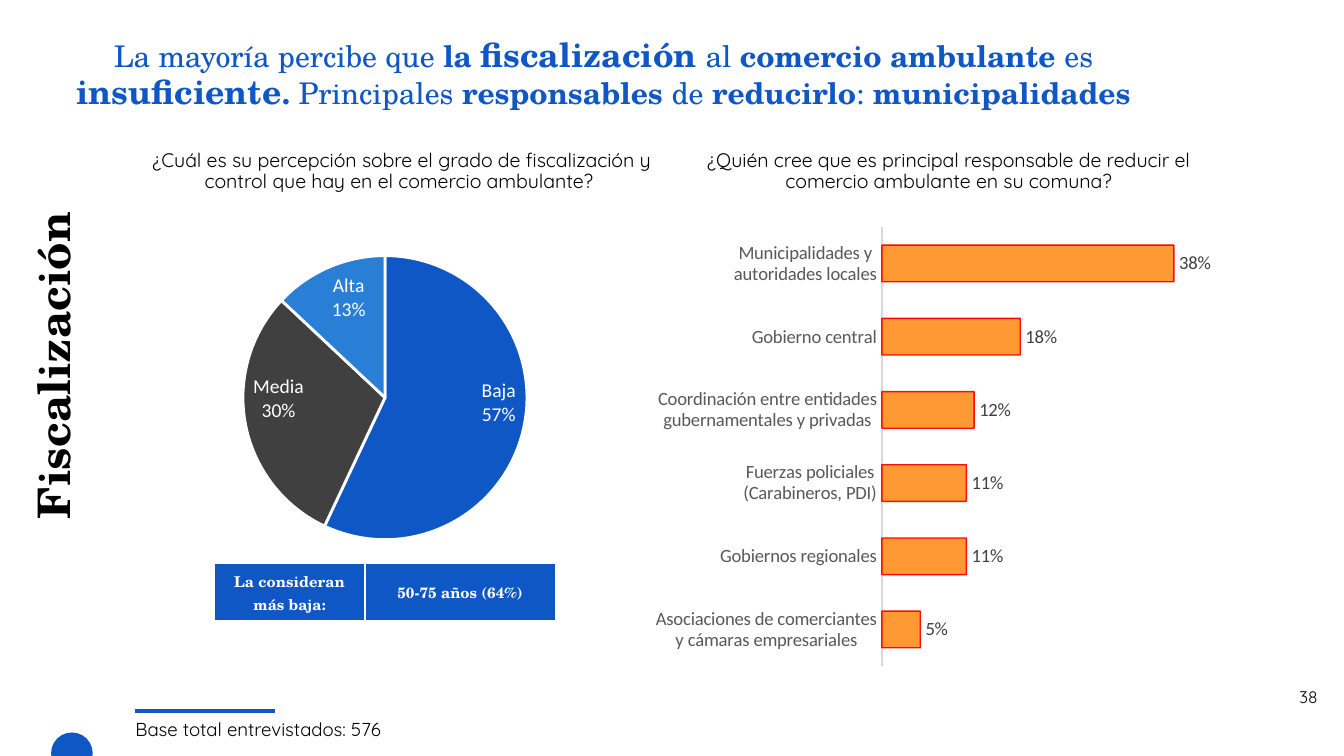
from lxml import etree
from pptx import Presentation, oxml
from pptx import util as u
from pptx.chart.data import CategoryChartData
from pptx.dml.color import RGBColor
from pptx.enum import chart as ch
from pptx.enum import shapes, text
from pptx.oxml.ns import qn

WIDTH = 10
HEIGHT = WIDTH * 9 / 16
UNIT = 0.1  # side of one grid cell, in inches
COLORS = {"blue": "0E57C4", "sky": "297FD5", "dark": "404040", "grey": "595959",
          "axis": "D9D9D9", "orange": "FF9933", "red": "FF0000",
          "white": "FFFFFF", "black": "000000"}
SERIF, SANS, CHART_FONT = "TeX Gyre Schola", "Quicksand", "Calibri"


def rgb(name):
    return RGBColor.from_string(COLORS[name])


def grid(*cells):
    """Turn columns and rows of the grid into lengths."""
    return [u.Inches(cell * UNIT) for cell in cells]


def style(font, size, color, name, bold=False):
    font.size, font.name, font.bold = u.Pt(size), name, bold
    font.color.rgb = rgb(color)


def write(frame, spans, size=10, color="black", font=SANS, bold=False,
          align=text.PP_ALIGN.LEFT, anchor=text.MSO_ANCHOR.TOP, spacing=0.9):
    """Fill a frame with one paragraph; spans is a string or (text, bold, size) tuples."""
    frame.word_wrap = True
    frame.vertical_anchor = anchor
    para = frame.paragraphs[0]
    para.alignment, para.line_spacing = align, spacing
    if isinstance(spans, str):
        spans = [(spans, bold, size)]
    for words, heavy, points in spans:
        span = para.add_run()
        span.text = words
        style(span.font, points, color, font, heavy)


def add_text(page, box, spans, **look):
    write(page.shapes.add_textbox(*grid(*box)).text_frame, spans, **look)


def add_decoration(page, dot_box, rule):
    dot = page.shapes.add_shape(shapes.MSO_SHAPE.OVAL, *grid(*dot_box))
    dot.shadow.inherit = False
    dot.fill.solid()
    dot.fill.fore_color.rgb = rgb("blue")
    dot.line.fill.background()
    line = page.shapes.add_connector(shapes.MSO_CONNECTOR.STRAIGHT, *grid(*rule))
    line.line.color.rgb, line.line.width = rgb("blue"), u.Pt(1.75)
    etree.SubElement(line._element.spPr, qn("a:effectLst"))


def add_side_title(page, box, words):
    title = page.shapes.title
    title.left, title.top, title.width, title.height = grid(*box)
    title.rotation = 270
    write(title.text_frame, words, size=24, font=SERIF, bold=True,
          align=text.PP_ALIGN.CENTER, anchor=text.MSO_ANCHOR.MIDDLE)


def add_chart(page, kind, box, answers, number_format, plot_area):
    """Add a one-series chart; plot_area is in percent of the chart's box."""
    data = CategoryChartData(number_format=number_format)
    data.categories = answers.keys()
    data.add_series("Series 1", answers.values())
    chart = page.shapes.add_chart(kind, *grid(*box), data).chart
    chart.has_title = chart.has_legend = False
    style(chart.font, 10, "black", CHART_FONT)

    area = chart._chartSpace.xpath("c:chart/c:plotArea")[0]
    for old in area.findall(qn("c:layout")):
        area.remove(old)
    layout = etree.Element(qn("c:layout"))
    manual = etree.SubElement(layout, qn("c:manualLayout"))
    settings = [("layoutTarget", "inner"), ("xMode", "edge"), ("yMode", "edge"),
                *zip("xywh", (percent / 100 for percent in plot_area))]
    for tag, value in settings:
        etree.SubElement(manual, qn(f"c:{tag}")).set("val", str(value))
    area.insert(0, layout)
    return chart


def add_labels(series, size, color, position):
    labels = series.data_labels
    labels.number_format, labels.number_format_is_linked = "0%", False
    labels.position = position
    style(labels.font, size, color, CHART_FONT)
    return labels


def add_perception_pie(page, box, answers):
    chart = add_chart(page, ch.XL_CHART_TYPE.PIE, box, answers, "0",
                      (11, 5.5, 78, 89))
    series = chart.plots[0].series[0]
    for index, color in enumerate(("blue", "dark", "sky")):
        slice_format = series.points[index].format
        slice_format.fill.solid()
        slice_format.fill.fore_color.rgb = rgb(color)
        slice_format.line.color.rgb = rgb("white")
        slice_format.line.width = u.Pt(1.5)
    labels = add_labels(series, 10.5, "white", ch.XL_LABEL_POSITION.INSIDE_END)
    labels.show_value = False
    labels.show_category_name = labels.show_percentage = True
    separator = etree.Element(qn("c:separator"))
    separator.text = "\n"
    labels._element.find(qn("c:showBubbleSize")).addnext(separator)


def add_responsible_bars(page, box, answers):
    chart = add_chart(page, ch.XL_CHART_TYPE.BAR_CLUSTERED, box, answers, "0%",
                      (37.5, 4.5, 57.9, 92.6))
    plot = chart.plots[0]
    plot.gap_width, plot.vary_by_categories = 100, False
    bars = plot.series[0]
    bars.format.fill.solid()
    bars.format.fill.fore_color.rgb = rgb("orange")
    bars.format.line.color.rgb = rgb("red")
    bars.format.line.width = u.Pt(0.75)
    outline = bars._element.xpath("c:spPr/a:ln//a:srgbClr")[0]
    etree.SubElement(outline, qn("a:alpha")).set("val", "95000")
    labels = add_labels(bars, 10, "dark", ch.XL_LABEL_POSITION.OUTSIDE_END)
    labels.show_value = True

    names, values = chart.category_axis, chart.value_axis
    names.reverse_order = True
    names.major_tick_mark = ch.XL_TICK_MARK.NONE
    names.format.line.color.rgb = rgb("axis")
    names.format.line.width = u.Pt(0.75)
    style(names.tick_labels.font, 10, "grey", CHART_FONT)
    values.visible = values.has_major_gridlines = False
    values.minimum_scale, values.maximum_scale = 0, 0.45


def add_border(cell, side, points):
    cell._tc.get_or_add_tcPr().append(oxml.parse_xml(
        f'<a:ln{side} xmlns:a="http://schemas.openxmlformats.org/drawingml/2006/main" '
        f'w="{u.Pt(points)}"><a:solidFill><a:srgbClr val="{COLORS["white"]}"/>'
        f'</a:solidFill></a:ln{side}>'))


def add_summary_table(page, box, columns):
    """columns maps the text of each cell to its width in grid columns."""
    table = page.shapes.add_table(1, len(columns), *grid(*box)).table
    for index, (words, width) in enumerate(columns.items()):
        table.columns[index].width = grid(width)[0]
        cell = table.cell(0, index)
        for side, points in zip("LRTB", (1, 1, 1, 3)):
            add_border(cell, side, points)
        cell.fill.solid()
        cell.fill.fore_color.rgb = rgb("blue")
        cell.vertical_anchor = text.MSO_ANCHOR.MIDDLE
        write(cell.text_frame, words, size=8, color="white", font=SERIF, bold=True,
              align=text.PP_ALIGN.CENTER, anchor=None, spacing=1)


def build_page(page):
    centre = text.PP_ALIGN.CENTER
    add_decoration(page, (3.8, 54.5, 3.1, 3.1), (10.05, 52.9, 20.45, 52.9))
    add_side_title(page, (-22.6, 24.3, 53.6, 5.8), "Fiscalización")
    add_text(page, (9.1, 53.1, 50.4, 2.7), "Base total entrevistados: 576")
    headline = [("La mayoría percibe que ", False, 16), ("la ", True, 16),
                ("fiscalización", True, 18), (" ", True, 16), ("al ", False, 16),
                ("comercio ambulante ", True, 16), ("es ", False, 16),
                ("insuficiente", True, 18), (". ", True, 16),
                ("Principales", False, 16), (" responsables ", True, 16),
                ("de", False, 16), (" reducirlo", True, 16), (":", False, 16),
                (" municipalidades", True, 16)]
    add_text(page, (1.3, 1.8, 87.2, 7.6), headline, color="blue", font=SERIF,
             align=centre, anchor=text.MSO_ANCHOR.MIDDLE)
    add_text(page, (95.7, 50.6, 3.6, 3.5), "38", size=9, spacing=1)

    questions = {
        9.7: " ¿Cuál es su percepción sobre el grado de fiscalización y control "
             "que hay en el comercio ambulante?",
        50.6: "¿Quién cree que es principal responsable de reducir el comercio "
              "ambulante en su comuna?"}
    for left, question in questions.items():
        add_text(page, (left, 10.7, 40, 7), question, size=10.5, align=centre)

    add_perception_pie(page, (15.1, 17.7, 27.1, 23.8),
                       {"Baja": 57, "Media": 30, "Alta": 13})
    add_summary_table(page, (15.95, 41.9, 25.4, 4.4),
                      {"La consideran más baja:": 11.2, "50-75 años (64%)": 14.2})
    add_responsible_bars(page, (48.8, 15.3, 44.6, 35.3), {
        "Municipalidades y autoridades locales": 0.38,
        "Gobierno central": 0.18,
        "Coordinación entre entidades gubernamentales y privadas": 0.12,
        "Fuerzas policiales (Carabineros, PDI)": 0.11,
        "Gobiernos regionales": 0.11,
        "Asociaciones de comerciantes y cámaras empresariales": 0.05})


def main():
    deck = Presentation()
    deck.slide_width, deck.slide_height = u.Inches(WIDTH), u.Inches(HEIGHT)
    build_page(deck.slides.add_slide(deck.slide_layouts[5]))
    deck.save("out.pptx")


if __name__ == "__main__":
    main()
